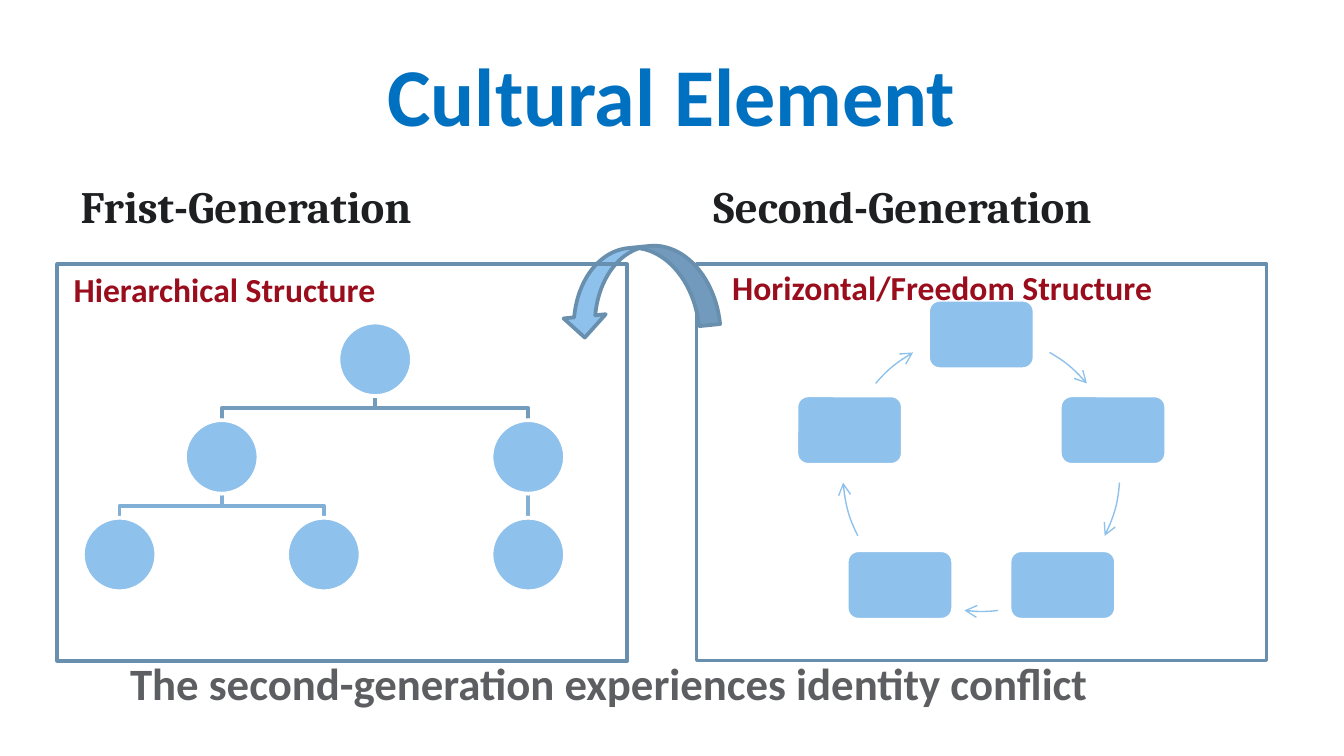
from math import cos, radians, sin

from lxml.etree import SubElement
from pptx import Presentation
from pptx.dml.color import RGBColor
from pptx.enum.shapes import MSO_SHAPE
from pptx.enum.text import MSO_ANCHOR, MSO_AUTO_SIZE, PP_ALIGN
from pptx.oxml.ns import qn
from pptx.util import Pt

COLORS = {
    "title": "0070C0",
    "heading": "1E1F21",
    "label": "9A0D1C",
    "note": "5D5E61",
    "node": "8EC1EB",
    "border": "698FAE",
    "upper_link": "729BBC",
    "lower_link": "81AFD5",
    "white": "FFFFFF",
}


def color(name):
    return RGBColor.from_string(COLORS[name])


def write_text(shape, text, size, fill, font="Calibri", align=PP_ALIGN.LEFT, anchor=MSO_ANCHOR.TOP):
    frame = shape.text_frame
    frame.word_wrap = True
    frame.auto_size = MSO_AUTO_SIZE.NONE
    frame.vertical_anchor = anchor
    paragraph = frame.paragraphs[0]
    paragraph.alignment = align
    paragraph.space_before = Pt(0)
    run = paragraph.add_run()
    run.text = text
    run.font.name = font
    run.font.size = Pt(size)
    run.font.bold = True
    run.font.color.rgb = color(fill)


class SlideBuilder:
    """Holds the slide and the shared look of its elements."""

    line_width = 2

    def __init__(self, slide):
        self.slide = slide

    def style(self, shape, fill, line, width=line_width):
        shape.shadow.inherit = False
        if fill:
            shape.fill.solid()
            shape.fill.fore_color.rgb = color(fill)
        else:
            shape.fill.background()
        shape.line.color.rgb = color(line)
        shape.line.width = Pt(width)

    def placeholder(self, index, box, text, **text_format):
        shape = self.slide.placeholders[index]
        shape.left, shape.top, shape.width, shape.height = map(Pt, box)
        write_text(shape, text, **text_format)

    def text(self, box, text, **text_format):
        write_text(self.slide.shapes.add_textbox(*map(Pt, box)), text, **text_format)

    def shape(self, kind, box, fill=None, line="white"):
        shape = self.slide.shapes.add_shape(kind, *map(Pt, box))
        self.style(shape, fill, line)
        return shape

    def node(self, kind, center_x, center_y, width, height):
        box = (center_x - width / 2, center_y - height / 2, width, height)
        self.shape(kind, box, fill="node")

    def link(self, points, line):
        start, *others = [(Pt(x), Pt(y)) for x, y in points]
        builder = self.slide.shapes.build_freeform(*start)
        builder.add_line_segments(others, close=False)
        self.style(builder.convert_to_shape(), None, line)

    def arc_arrow(self, center_x, center_y, radius, start, end):
        box = (center_x - radius, center_y - radius, 2 * radius, 2 * radius)
        arc = self.slide.shapes.add_shape(MSO_SHAPE.ARC, *map(Pt, box))
        # Angles are stored in 60000ths of a degree, adjustments in 100000ths
        arc.adjustments[0] = start * 0.6
        arc.adjustments[1] = end * 0.6
        self.style(arc, None, "node", 0.75)
        SubElement(arc.line._get_or_add_ln(), qn("a:tailEnd"), type="arrow")


def draw_hierarchy(builder):
    diameter, top, row_step = 39.4, 192.5, 52.3
    # Each node: column centre, row, index of its parent
    nodes = [(201, 0, None), (118.8, 1, 0), (283, 1, 0), (64.1, 2, 1), (173.5, 2, 1), (283, 2, 2)]
    for x, row, parent in nodes:
        if parent is None:
            continue
        parent_x = nodes[parent][0]
        end = top + row * row_step - diameter / 2
        start = end - row_step + diameter
        middle = (start + end) / 2
        points = [(parent_x, start), (parent_x, middle), (x, middle), (x, end)]
        if parent_x == x:
            points = [points[0], points[-1]]
        builder.link(points, "upper_link" if row == 1 else "lower_link")
    for x, row, _ in nodes:
        builder.node(MSO_SHAPE.OVAL, x, top + row * row_step, diameter, diameter)


def draw_cycle(builder):
    center_x, center_y, radius = 525.7, 253.4, 74.2
    arrow_angles = [(299.5, 319.7), (4, 27), (83, 97), (153, 176), (220.3, 240.5)]
    for position, (start, end) in enumerate(arrow_angles):
        angle = radians(72 * position - 90)
        builder.node(MSO_SHAPE.ROUNDED_RECTANGLE, center_x + radius * cos(angle),
                     center_y + radius * sin(angle), 57, 37.2)
        builder.arc_arrow(center_x, center_y, radius, start, end)


def main():
    presentation = Presentation()
    presentation.slide_width, presentation.slide_height = Pt(720), Pt(405)
    slide = presentation.slides.add_slide(presentation.slide_layouts[4])
    builder = SlideBuilder(slide)

    # Title and column headings; the unused content placeholders go
    builder.placeholder(0, (36, 16.5, 648, 67.5), "Cultural Element", size=44, fill="title",
                        align=PP_ALIGN.CENTER, anchor=MSO_ANCHOR.MIDDLE)
    for index, left, heading in [(1, 36, "Frist-Generation"), (3, 375, "Second-Generation")]:
        builder.placeholder(index, (left, 90.7, 318.2, 37.5), heading, size=24,
                            fill="heading", font="Cambria", anchor=MSO_ANCHOR.BOTTOM)
    for index in (2, 4):
        element = slide.placeholders[index].element
        element.getparent().remove(element)

    # Diagrams
    draw_hierarchy(builder)
    draw_cycle(builder)

    # Frames and the arrow between them
    builder.shape(MSO_SHAPE.RECTANGLE, (373.2, 141.4, 305.3, 212.5), line="border")
    arrow = builder.shape(MSO_SHAPE.CURVED_UP_ARROW, (299.5, 132.5, 84.2, 45.4),
                          fill="node", line="border")
    arrow.rotation = 174.3
    builder.shape(MSO_SHAPE.RECTANGLE, (30.7, 141.6, 305.3, 212.5), line="border")

    # Frame labels and closing statement
    builder.text((32.4, 140.4, 360, 29), "Hierarchical Structure", size=18, fill="label")
    builder.text((385.2, 139.7, 360, 29), "Horizontal/Freedom Structure", size=18, fill="label")
    builder.text((62.6, 347.8, 604.8, 52.6), "The second-generation experiences identity conflict",
                 size=24, fill="note")

    presentation.save("out.pptx")


if __name__ == "__main__":
    main()
